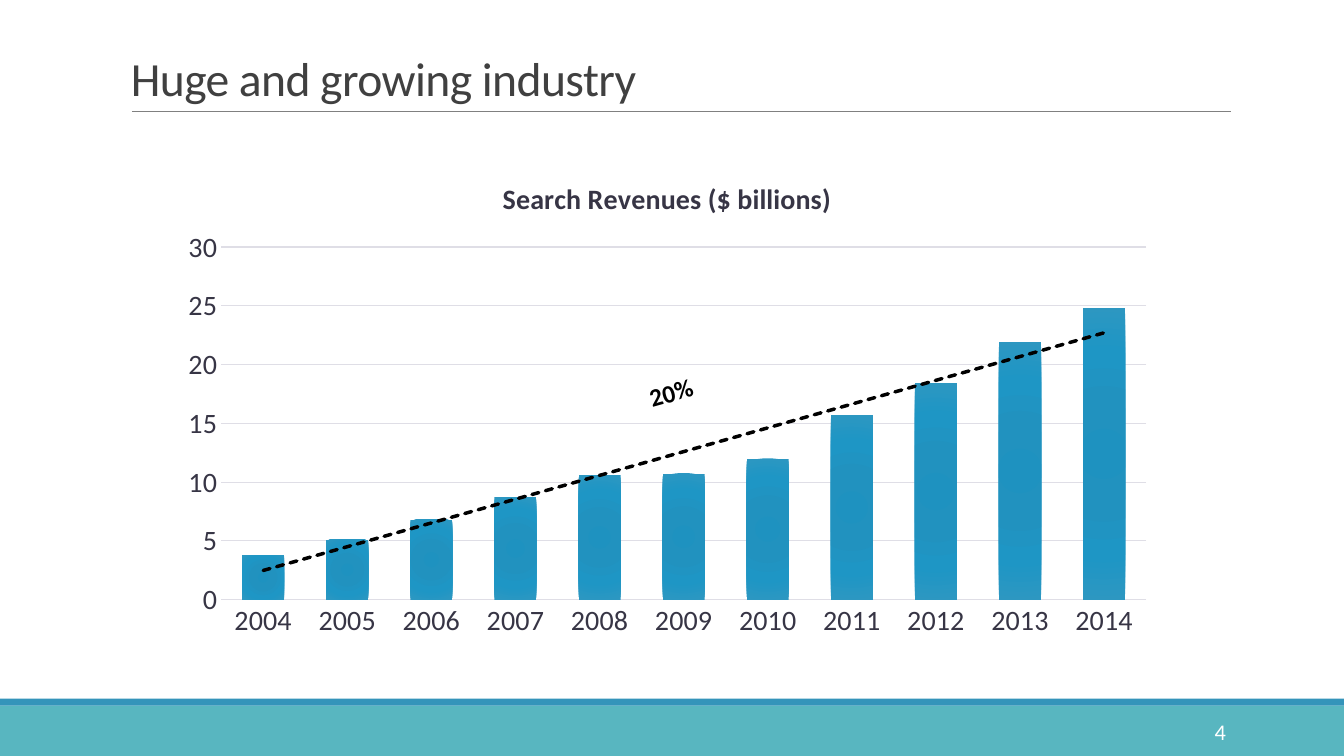
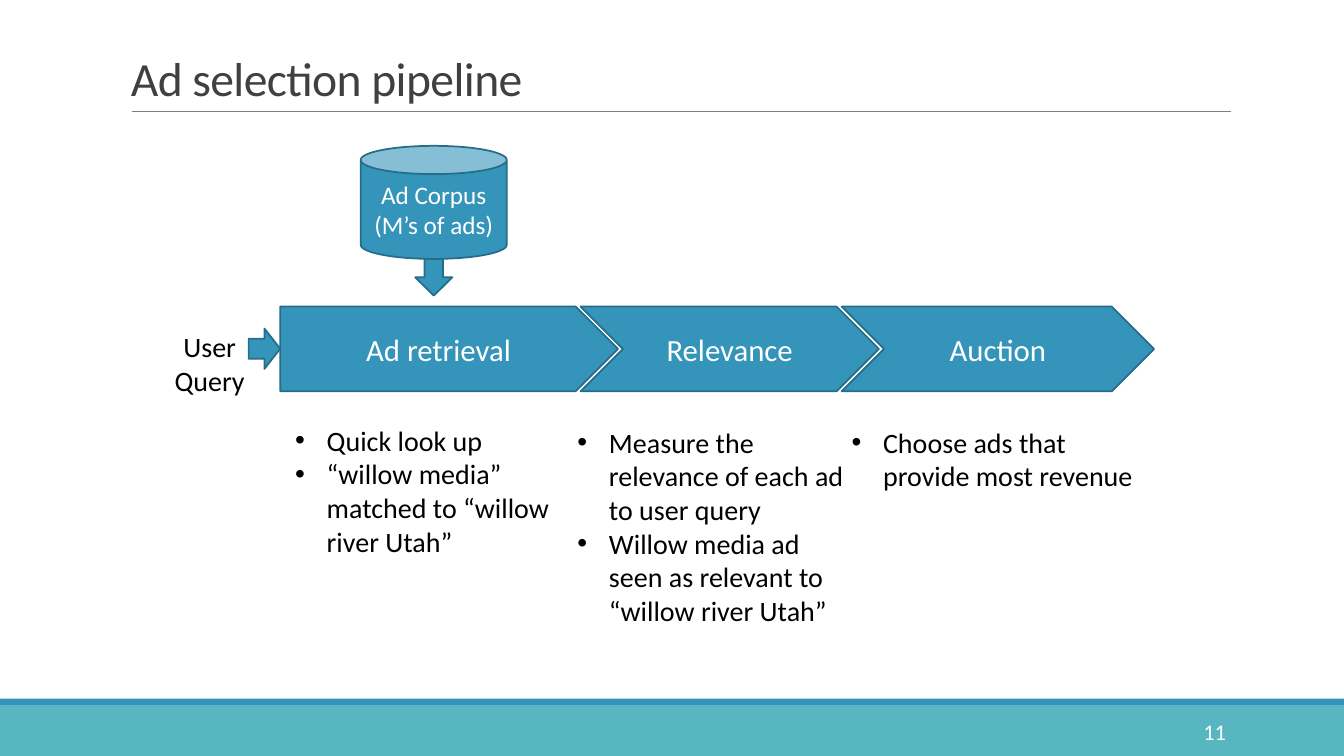
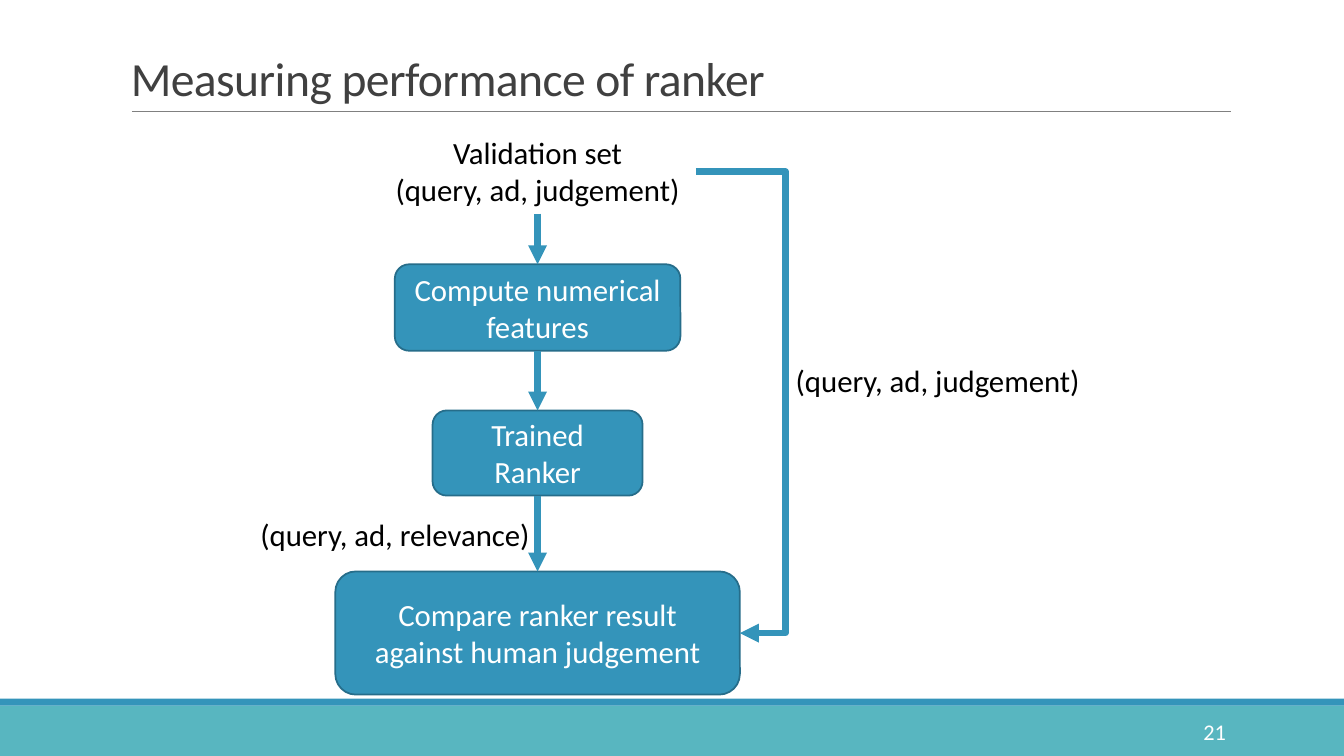
import pptx
import pptx.chart.data
import pptx.dml.color
import pptx.enum.chart
import pptx.enum.dml
import pptx.enum.shapes
import pptx.enum.text
import pptx.oxml
import pptx.oxml.ns
import pptx.util

Pt = pptx.util.Pt
RGBColor = pptx.dml.color.RGBColor
SHAPE = pptx.enum.shapes.MSO_SHAPE
CONNECTOR = pptx.enum.shapes.MSO_CONNECTOR
ALIGN = pptx.enum.text.PP_ALIGN
ANCHOR = pptx.enum.text.MSO_ANCHOR
AUTO_SIZE = pptx.enum.text.MSO_AUTO_SIZE
qn = pptx.oxml.ns.qn

FONT = "Calibri"
WHITE = RGBColor(0xFF, 0xFF, 0xFF)
BLACK = RGBColor(0, 0, 0)
BLUE = RGBColor(0x34, 0x94, 0xBA)
BLUE_EDGE = RGBColor(0x26, 0x6D, 0x8A)
TEAL = RGBColor(0x58, 0xB6, 0xC0)
TITLE_GREY = RGBColor(0x40, 0x40, 0x40)
RULE_GREY = RGBColor(0x80, 0x80, 0x80)
AXIS_TEXT = RGBColor(0x37, 0x35, 0x45)
GRID = RGBColor(0xDF, 0xDE, 0xE6)

SLIDE_W, SLIDE_H = 960, 540
TOP, LEFT, BOTTOM, RIGHT = range(4)

YEARS = [str(year) for year in range(2004, 2015)]
REVENUES = [3.8, 5.1, 6.8, 8.7, 10.6, 10.7, 12, 15.7, 18.4, 21.9, 24.8]
BAR_STOPS = [(0, "1E92C0"), (34, "2192BF"), (70, "1E96C5"), (100, "2D97C1")]

# Stage name, shape, left, width; then bullet left, top, width, items
STAGES = [
    ("Ad retrieval", SHAPE.PENTAGON, 200.2, 241.2, 203.8, 298.8, 201.6,
     ["Quick look up", "“willow media” matched to “willow river Utah”"]),
    ("Relevance", SHAPE.CHEVRON, 414.7, 213.1, 405.4, 300.2, 206.6,
     ["Measure the relevance of each ad to user query",
      "Willow media ad seen as relevant to “willow river Utah”"]),
    ("Auction", SHAPE.CHEVRON, 601.2, 223.2, 601.2, 300.2, 223.2,
     ["Choose ads that provide most revenue"]),
]


def xml(body):
    """Parse an element written with the a: and c: prefixes."""
    head, rest = body.split(">", 1)
    slash = "/" if head.endswith("/") else ""
    return pptx.oxml.parse_xml(
        f"{head.rstrip('/')} {pptx.oxml.ns.nsdecls('a', 'c')}{slash}>{rest}")


def style_font(font, size, color, bold=False):
    font.name, font.size, font.bold = FONT, Pt(size), bold
    font.color.rgb = color


def write(frame, lines, size, color, align, bold=False):
    for index, line in enumerate(lines):
        paragraph = frame.paragraphs[0] if index == 0 else frame.add_paragraph()
        paragraph.alignment = align
        run = paragraph.add_run()
        run.text = line
        style_font(run.font, size, color, bold)


def add_text(slide, box, lines, size, color=BLACK, align=ALIGN.LEFT,
             anchor=ANCHOR.TOP, wrap=True, grow=True, bold=False):
    text = slide.shapes.add_textbox(*map(Pt, box))
    frame = text.text_frame
    frame.word_wrap = wrap
    frame.vertical_anchor = anchor
    frame.auto_size = AUTO_SIZE.SHAPE_TO_FIT_TEXT if grow else AUTO_SIZE.NONE
    write(frame, lines, size, color, align, bold)
    return text


def add_label(slide, box, lines, size=22):
    return add_text(slide, box, lines, size, align=ALIGN.CENTER, wrap=False)


def add_bullets(slide, box, items):
    frame = add_text(slide, box, items, 20).text_frame
    for paragraph in frame.paragraphs:
        properties = paragraph._p.get_or_add_pPr()
        properties.set("marL", str(Pt(22.5)))
        properties.set("indent", str(-Pt(22.5)))
        properties.append(xml('<a:buFont typeface="Arial"/>'))
        properties.append(xml('<a:buChar char="•"/>'))


def add_block(slide, kind, box, lines=(), size=22, fill=BLUE, edge=BLUE_EDGE):
    block = slide.shapes.add_shape(kind, *map(Pt, box))
    block.shadow.inherit = False
    block.fill.solid()
    block.fill.fore_color.rgb = fill
    if edge is None:
        block.line.fill.background()
    else:
        block.line.color.rgb = edge
        block.line.width = Pt(1.25)
    frame = block.text_frame
    frame.word_wrap = True
    frame.vertical_anchor = ANCHOR.MIDDLE
    write(frame, lines, size, WHITE, ALIGN.CENTER)
    return block


def add_line(slide, color, width, ends=(0, 0, 0, 0), kind=CONNECTOR.STRAIGHT):
    line = slide.shapes.add_connector(kind, *map(Pt, ends))
    line.line.color.rgb = color
    line.line.width = Pt(width)
    line._element.spPr.append(xml("<a:effectLst/>"))
    return line


def add_arrow(slide, source, source_side, target, target_side,
              kind=CONNECTOR.STRAIGHT):
    arrow = add_line(slide, BLUE, 4.5, kind=kind)
    arrow.begin_connect(source, source_side)
    arrow.end_connect(target, target_side)
    arrow.line._get_or_add_ln().append(xml('<a:tailEnd type="triangle"/>'))
    return arrow


def add_page(deck, title, number):
    """Add a slide with the shared bands, title, rule and page number."""
    slide = deck.slides.add_slide(deck.slide_layouts[6])
    add_block(slide, SHAPE.RECTANGLE, (0, 504, SLIDE_W, 36), fill=TEAL, edge=None)
    add_block(slide, SHAPE.RECTANGLE, (0, 499, SLIDE_W, 5), edge=None)
    add_line(slide, RULE_GREY, 0.5, (94.3, 79.8, 879, 79.8))
    heading = add_text(slide, (86.4, 10, 792, 69.2), [title], 34, TITLE_GREY,
                       anchor=ANCHOR.BOTTOM, grow=False)
    paragraph = heading.text_frame.paragraphs[0]
    paragraph.line_spacing = 0.85
    paragraph.runs[0].font._element.set("spc", "-40")
    add_text(slide, (779.8, 508.4, 103, 28.8), [str(number)], 16, WHITE,
             ALIGN.RIGHT, ANCHOR.MIDDLE, grow=False)
    return slide


def manual_layout(target="", **places):
    parts = "".join(f'<c:{name} val="{value}"/>' for name, value in places.items())
    return xml(f'<c:layout><c:manualLayout>{target}<c:xMode val="edge"/>'
               f'<c:yMode val="edge"/>{parts}</c:manualLayout></c:layout>')


def replace_layout(parent, layout, predecessor):
    for old in parent.findall(qn("c:layout")):
        parent.remove(old)
    if predecessor is None:
        parent.insert(0, layout)
    else:
        predecessor.addnext(layout)


def style_axis(axis):
    axis.major_tick_mark = axis.minor_tick_mark = pptx.enum.chart.XL_TICK_MARK.NONE
    style_font(axis.tick_labels.font, 20, AXIS_TEXT)


def style_bars(series):
    """Give the bars a radial gradient and a linear trend line."""
    stops = "".join(f'<a:gs pos="{place * 1000}"><a:srgbClr val="{color}"/></a:gs>'
                    for place, color in BAR_STOPS)
    edges = " ".join(f'{side}="100000"' for side in "ltrb")
    series.format.line.fill.background()
    series._element.spPr.insert(0, xml(
        f'<a:gradFill><a:gsLst>{stops}</a:gsLst><a:path path="circle">'
        f'<a:fillToRect {edges}/></a:path></a:gradFill>'))
    series._element.find(qn("c:cat")).addprevious(xml(
        f'<c:trendline><c:spPr><a:ln w="{Pt(2.5)}" cap="rnd"><a:solidFill>'
        f'<a:srgbClr val="{BLACK}"/></a:solidFill><a:prstDash val="sysDash"/>'
        '</a:ln></c:spPr><c:trendlineType val="linear"/>'
        '<c:dispRSqr val="0"/><c:dispEq val="0"/></c:trendline>'))


def add_revenue_chart(slide):
    data = pptx.chart.data.CategoryChartData()
    data.categories = YEARS
    data.add_series("Series 1", REVENUES)
    chart = slide.shapes.add_chart(
        pptx.enum.chart.XL_CHART_TYPE.COLUMN_CLUSTERED,
        *map(Pt, (120.2, 106.6, 712.8, 356.4)), data).chart
    style_font(chart.font, 10, BLACK)
    chart.has_legend = False

    chart.has_title = True
    run = chart.chart_title.text_frame.paragraphs[0].add_run()
    run.text = "Search Revenues ($ billions)"
    style_font(run.font, 20, AXIS_TEXT, bold=True)
    title = chart.chart_title._element
    replace_layout(title, manual_layout(x=0.33, y=0.05), title.find(qn("c:tx")))
    replace_layout(chart._chartSpace.chart.plotArea, manual_layout(
        '<c:layoutTarget val="inner"/>', x=0.053, y=0.196, w=0.927, h=0.707), None)

    years, billions = chart.category_axis, chart.value_axis
    for axis in (years, billions):
        style_axis(axis)
    years.format.line.color.rgb = GRID
    years.format.line.width = Pt(0.75)
    billions.minimum_scale, billions.maximum_scale = 0, 30
    billions.major_unit = 5
    billions.format.line.fill.background()
    billions.major_gridlines.format.line.color.rgb = GRID
    billions.major_gridlines.format.line.width = Pt(0.75)

    plot = chart.plots[0]
    plot.vary_by_categories = False
    plot.gap_width, plot.overlap = 100, -24
    style_bars(plot.series[0])


def industry_slide(deck):
    slide = add_page(deck, "Huge and growing industry", 4)
    add_revenue_chart(slide)
    growth = add_text(slide, (456.5, 265.7, 46.1, 28.8), ["20%"], 18,
                      wrap=False, bold=True)
    growth.rotation = 344.4


def pipeline_slide(deck):
    slide = add_page(deck, "Ad selection pipeline", 11)
    add_block(slide, SHAPE.CAN, (257.6, 104.2, 104.4, 80.8),
              ["Ad Corpus", "(M’s of ads)"], 18)
    add_label(slide, (117.4, 231.8, 64.8, 55.4), ["User", "Query"], 20)
    add_block(slide, SHAPE.DOWN_ARROW, (296.6, 185, 26.6, 26.2))
    add_block(slide, SHAPE.RIGHT_ARROW, (177.6, 234.7, 22.6, 28.8))
    for name, kind, left, width, list_left, list_top, list_width, items in STAGES:
        add_block(slide, kind, (left, 219, width, 60.5), [name])
        add_bullets(slide, (list_left, list_top, list_width, 7.2 + 24 * len(items)),
                    items)


def ranker_slide(deck):
    slide = add_page(deck, "Measuring performance of ranker", 21)
    center = 384

    def step(top, width, height, text):
        return add_block(slide, SHAPE.ROUNDED_RECTANGLE,
                         (center - width / 2, top, width, height), [text])

    validation = add_label(slide, (center - 113, 92.2, 226, 60.5),
                           ["Validation set", "(query, ad, judgement)"])
    compute = step(188.8, 204, 61.8, "Compute numerical features")
    ranker = step(293.2, 150, 60.8, "Trained Ranker")
    compare = step(408.2, 289, 88, "Compare ranker result against human judgement")
    chain = [validation, compute, ranker, compare]
    for source, target in zip(chain, chain[1:]):
        add_arrow(slide, source, BOTTOM, target, TOP)

    bypass = add_arrow(slide, validation, RIGHT, compare, RIGHT, CONNECTOR.ELBOW)
    adjustments = bypass._element.spPr.find(qn("a:prstGeom")).get_or_add_avLst()
    adjustments.append(xml('<a:gd name="adj1" fmla="val 203600"/>'))

    add_label(slide, (177.8, 365, 208.8, 33.8), ["(query, ad, relevance)"])
    add_label(slide, (560, 254.9, 219.6, 33.8), ["(query, ad, judgement)"])


def main():
    deck = pptx.Presentation()
    deck.slide_width, deck.slide_height = Pt(SLIDE_W), Pt(SLIDE_H)
    industry_slide(deck)
    pipeline_slide(deck)
    ranker_slide(deck)
    deck.save("out.pptx")


if __name__ == "__main__":
    main()
